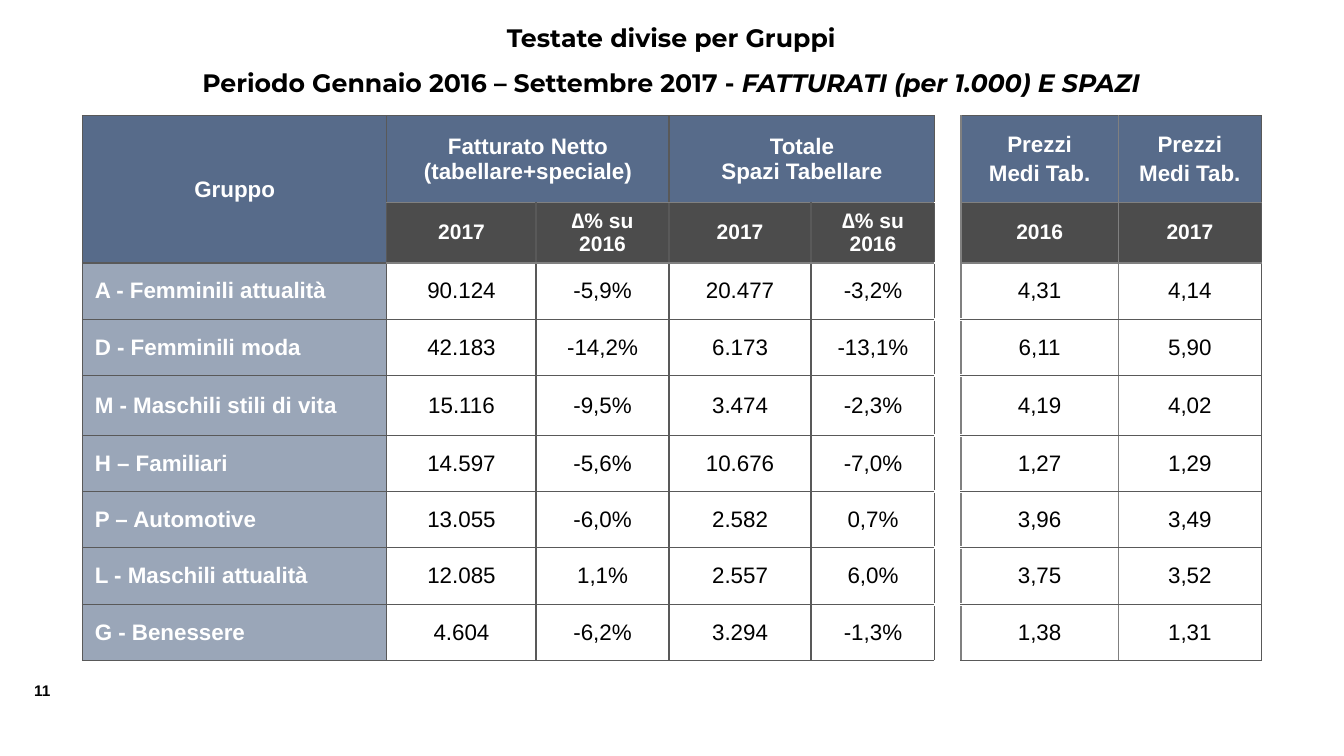
"""Builds the slide of turnover, space and average prices by magazine group."""
from lxml import etree
from pptx import Presentation
from pptx import util as u
from pptx.dml.color import RGBColor
from pptx.enum import text
from pptx.oxml.ns import qn

TITLE = [
    [("Testate divise per Gruppi", False)],
    [("Periodo Gennaio 2016 – Settembre 2017 - ", False),
     ("FATTURATI (per 1.000) E SPAZI", True)],
]
GROUP_HEADS = {
    0: ["Gruppo"],
    1: ["Fatturato Netto (tabellare+speciale)"],
    3: ["Totale", "Spazi Tabellare"],
    6: ["Prezzi", "Medi Tab."],
    7: ["Prezzi", "Medi Tab."],
}
YEAR_HEADS = ["", "2017", "∆% su 2016", "2017", "∆% su 2016", "", "2016", "2017"]
ROWS = [
    ("A - Femminili attualità", "90.124", "-5,9%", "20.477", "-3,2%", "", "4,31", "4,14"),
    ("D - Femminili moda", "42.183", "-14,2%", "6.173", "-13,1%", "", "6,11", "5,90"),
    ("M - Maschili stili di vita", "15.116", "-9,5%", "3.474", "-2,3%", "", "4,19", "4,02"),
    ("H – Familiari", "14.597", "-5,6%", "10.676", "-7,0%", "", "1,27", "1,29"),
    ("P – Automotive", "13.055", "-6,0%", "2.582", "0,7%", "", "3,96", "3,49"),
    ("L - Maschili attualità", "12.085", "1,1%", "2.557", "6,0%", "", "3,75", "3,52"),
    ("G - Benessere", "4.604", "-6,2%", "3.294", "-1,3%", "", "1,38", "1,31"),
]
PAGE = "11"
COL_W = [7.67, 3.76, 3.35, 3.58, 3.12, 0.66, 3.96, 3.61]
ROW_H = [2.18, 1.52, 1.42, 1.42, 1.5, 1.42, 1.42, 1.42, 1.42]
MERGES = [((0, 0), (1, 0)), ((0, 1), (0, 2)), ((0, 3), (0, 4))]
GAP_COL = 5
HEAD_ROWS = 2
THEME = {
    "blue": "576B8A", "black": "000000", "white": "FFFFFF",
    "dark_line": "595959", "grey_line": "808080",
    "head_font": "Montserrat", "font": "Arial",
    "title": 18, "body": 16, "year": 15, "page": 11,
}


def add_run(p, content, size, color="black", bold=True, italic=False, font="font"):
    r = p.add_run()
    r.text = content
    r.font.name = THEME[font]
    r.font.size = u.Pt(THEME[size])
    r.font.bold = bold
    r.font.italic = italic
    r.font.color.rgb = RGBColor.from_string(THEME[color])


def fill_cell(cell, color, alpha=100):
    cell.fill.solid()
    cell.fill.fore_color.rgb = RGBColor.from_string(THEME[color])
    if alpha < 100:
        clr = cell.fill._xPr.find(".//" + qn("a:srgbClr"))
        etree.SubElement(clr, qn("a:alpha")).set("val", str(alpha * 1000))


def vertical_line(edge):
    return ("grey_line" if edge in (6, 7) else "dark_line"), 1


def horizontal_line(edge, col):
    if col == GAP_COL:
        return "white", 2.25 if HEAD_ROWS < edge < len(ROW_H) else 1
    return ("grey_line" if col and edge in (1, 2) else "dark_line"), 1


def border_cell(cell, row, col):
    lines = [("a:lnL", vertical_line(col)), ("a:lnR", vertical_line(col + 1)),
             ("a:lnT", horizontal_line(row, col)), ("a:lnB", horizontal_line(row + 1, col))]
    tcPr = cell._tc.get_or_add_tcPr()
    for i, (tag, (color, width)) in enumerate(lines):
        ln = etree.Element(qn(tag), w=str(u.Pt(width)))
        solid = etree.SubElement(ln, qn("a:solidFill"))
        etree.SubElement(solid, qn("a:srgbClr")).set("val", THEME[color])
        tcPr.insert(i, ln)


def write_cell(cell, lines, size, color, bold, align):
    cell.vertical_anchor = text.MSO_ANCHOR.MIDDLE
    tf = cell.text_frame
    for i, line in enumerate(lines):
        p = tf.add_paragraph() if i else tf.paragraphs[0]
        p.alignment = align
        add_run(p, line, size, color, bold)


def build_cell(cell, row, col):
    center = text.PP_ALIGN.CENTER
    if row >= HEAD_ROWS:
        cell.margin_left = cell.margin_right = cell.margin_top = cell.margin_bottom = 0
    if col == GAP_COL:
        fill_cell(cell, "white")
    elif row == 0:
        fill_cell(cell, "blue")
        write_cell(cell, GROUP_HEADS.get(col, []), "body", "white", True, center)
        if col > GAP_COL:
            cell.text_frame.paragraphs[1].space_before = u.Pt(3.2)
    elif row == 1 and col:
        fill_cell(cell, "black", 70)
        write_cell(cell, [YEAR_HEADS[col]], "year", "white", True, center)
    elif row == 1:
        fill_cell(cell, "blue")
    elif col == 0:
        fill_cell(cell, "blue", 60)
        cell.margin_left = u.Cm(0.31)
        write_cell(cell, [ROWS[row - HEAD_ROWS][0]], "body", "white", True, text.PP_ALIGN.LEFT)
    else:
        cell.fill.background()
        write_cell(cell, [ROWS[row - HEAD_ROWS][col]], "body", "black", False, center)
    border_cell(cell, row, col)


def add_title(s):
    tf = s.shapes.add_textbox(u.Cm(2.82), u.Cm(0.05), u.Cm(28.19), u.Cm(2.72)).text_frame
    tf.word_wrap = True
    p = tf.paragraphs[0]
    p.alignment = text.PP_ALIGN.CENTER
    p.line_spacing = 1.5
    for i, line in enumerate(TITLE):
        if i:
            p.add_line_break()
        for content, italic in line:
            add_run(p, content, "title", italic=italic, font="head_font")


def add_group_table(s):
    table = s.shapes.add_table(len(ROW_H), len(COL_W), u.Cm(2.08), u.Cm(2.92),
                               u.Cm(sum(COL_W)), u.Cm(sum(ROW_H))).table
    table.first_row = table.horz_banding = False
    for column, width in zip(table.columns, COL_W):
        column.width = u.Cm(width)
    for row, height in zip(table.rows, ROW_H):
        row.height = u.Cm(height)
    for first, last in MERGES:
        table.cell(*first).merge(table.cell(*last))
    for row in range(len(ROW_H)):
        for col in range(len(COL_W)):
            build_cell(table.cell(row, col), row, col)


def add_page_number(s):
    tf = s.shapes.add_textbox(u.Cm(0.61), u.Cm(17.04), u.Cm(1.07), u.Cm(0.74)).text_frame
    tf.word_wrap = False
    add_run(tf.paragraphs[0], PAGE, "page")


def main():
    prs = Presentation()
    prs.slide_width, prs.slide_height = u.Cm(33.87), u.Cm(19.05)
    s = prs.slides.add_slide(prs.slide_layouts[6])
    add_title(s)
    add_group_table(s)
    add_page_number(s)
    prs.save("out.pptx")


if __name__ == "__main__":
    main()
